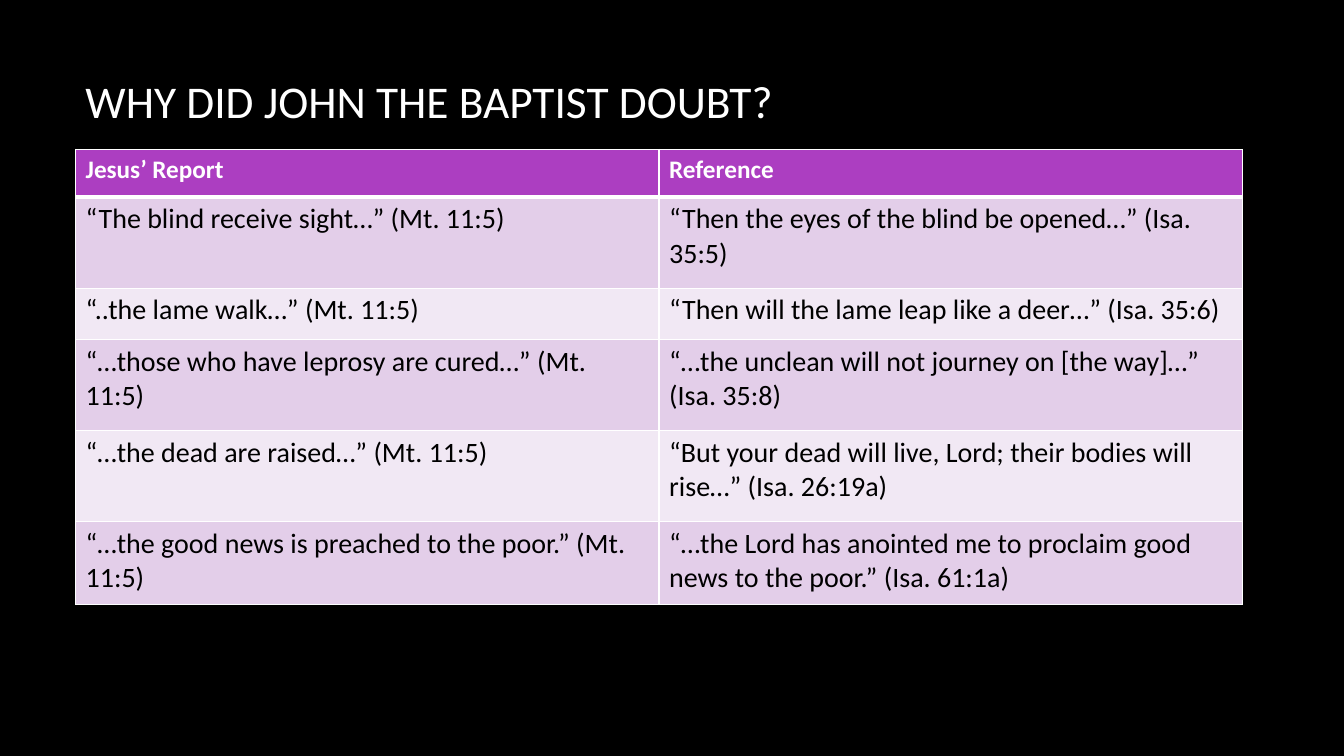
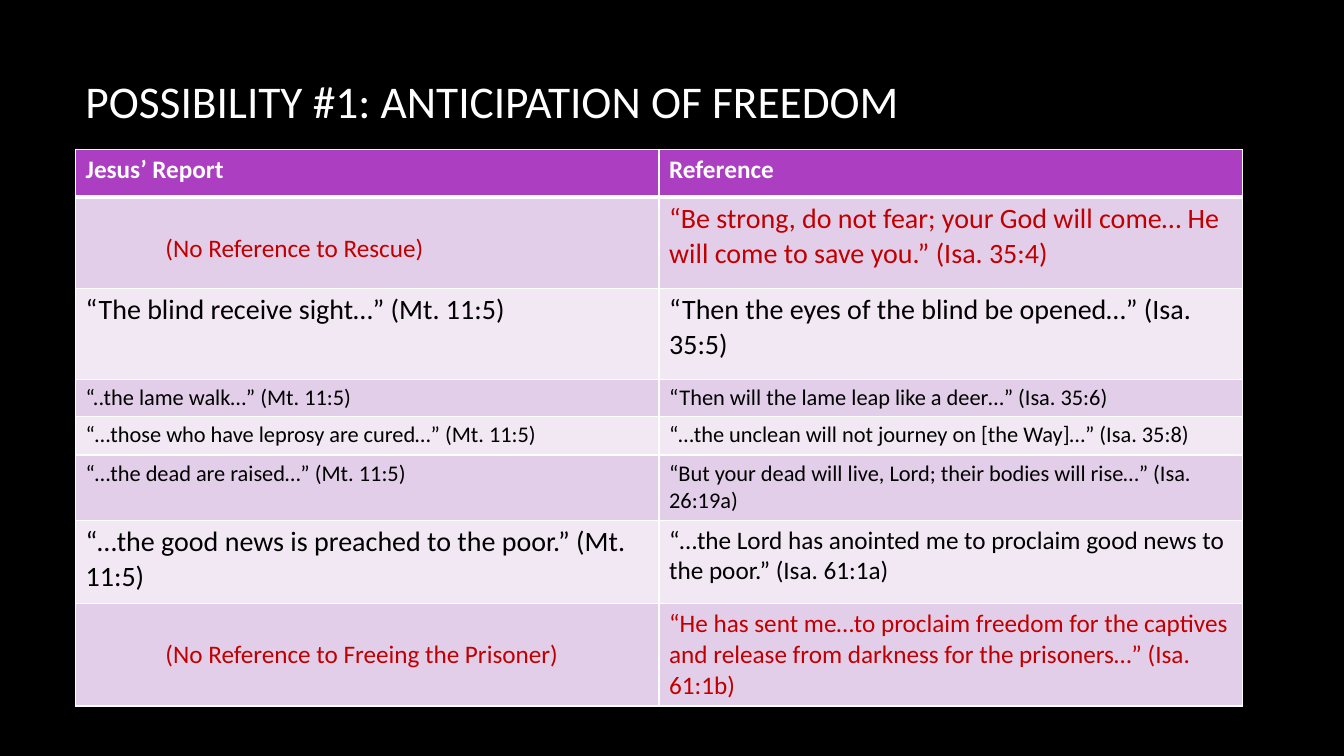
from dataclasses import dataclass

from lxml.etree import SubElement
from pptx import Presentation
from pptx.dml.color import RGBColor as RGB
from pptx.enum.text import MSO_ANCHOR as Anchor
from pptx.oxml.ns import qn
from pptx.util import Pt


@dataclass(frozen=True)
class Theme:
    font: str = "Calibri"
    background: str = "000000"
    light: str = "FFFFFF"
    ink: str = "000000"
    accent: str = "C00000"
    header: str = "AC3EC1"
    bands: tuple[str, str] = ("E3CEE9", "F1E8F4")
    title_size: float = 32.4
    large: float = 20
    medium: float = 18
    small: float = 16
    thin: float = 1
    thick: float = 3


THEME = Theme()
TABLE_LEFT, TABLE_TOP, COLUMN_WIDTH = 54, 106.7, 416.8
NOTE_INDENT, NOTE_TOP = 57, 25.6


@dataclass(frozen=True)
class Entry:
    text: str
    size: float = THEME.large
    color: str = THEME.ink
    bold: bool = False
    note: bool = False


@dataclass(frozen=True)
class Row:
    height: float
    report: Entry
    reference: Entry


@dataclass(frozen=True)
class TableSlide:
    title: str
    rows: list[Row]


def heading(text: str) -> Entry:
    return Entry(text, THEME.medium, THEME.light, bold=True)


def note(text: str) -> Entry:
    """An indented remark, set one line down in its cell."""
    return Entry(text, THEME.medium, THEME.accent, note=True)


def pair(height: float, report: str, reference: str, size: float = THEME.large,
         reference_size: float | None = None) -> Row:
    return Row(height, Entry(report, size), Entry(reference, reference_size or size))


HEADER = Row(34.2, heading("Jesus’ Report"), heading("Reference"))
BLIND = ("“The blind receive sight…” (Mt. 11:5)",
         "“Then the eyes of the blind be opened…” (Isa. 35:5)")
LAME = ("“..the lame walk…” (Mt. 11:5)",
        "“Then will the lame leap like a deer…” (Isa. 35:6)")
LEPROSY = "“…those who have leprosy are cured…” (Mt. 11:5)"
DEAD = ("“…the dead are raised…” (Mt. 11:5)",
        "“But your dead will live, Lord; their bodies will rise…” (Isa. 26:19a)")
POOR = ("“…the good news is preached to the poor.” (Mt. 11:5)",
        "“…the Lord has anointed me to proclaim good news to the poor.” (Isa. 61:1a)")

SLIDES = [
    TableSlide("WHY DID JOHN THE BAPTIST DOUBT?", [
        HEADER,
        pair(65, *BLIND),
        pair(36.5, *LAME),
        pair(65, LEPROSY, "“…the unclean will not journey on [the way]…” (Isa. 35:8)"),
        pair(65, *DEAD),
        pair(59.6, *POOR),
    ]),
    TableSlide("POSSIBILITY #1: ANTICIPATION OF FREEDOM", [
        HEADER,
        Row(65, note("(No Reference to Rescue)"),
            Entry("“Be strong, do not fear; your God will come… He will come to save you.” "
                  "(Isa. 35:4)", color=THEME.accent)),
        pair(65, *BLIND),
        pair(26.7, *LAME, THEME.small),
        pair(27.5, LEPROSY, "“…the unclean will not journey on [the Way]…” (Isa. 35:8)",
             THEME.small),
        pair(46.5, *DEAD, THEME.small),
        pair(59.6, *POOR, reference_size=THEME.medium),
        Row(73.2, note("(No Reference to Freeing the Prisoner)"),
            Entry("“He has sent me…to proclaim freedom for the captives and release from "
                  "darkness for the prisoners…” (Isa. 61:1b)", THEME.medium, THEME.accent)),
    ]),
]


def add_run(p, text: str, size: float, color: str, bold: bool = False) -> None:
    r = p.add_run()
    r.text = text
    r.font.name = THEME.font
    r.font.size = Pt(size)
    r.font.bold = bold
    r.font.color.rgb = RGB.from_string(color)


def add_title(slide, text: str) -> None:
    tf = slide.shapes.add_textbox(Pt(54), Pt(48), Pt(798), Pt(48)).text_frame
    tf.word_wrap = True
    tf.vertical_anchor = Anchor.MIDDLE
    add_run(tf.paragraphs[0], text, THEME.title_size, THEME.light)


def set_borders(cell, top: float, bottom: float) -> None:
    """Draw the four cell edges; call before the fill is set."""
    tc_pr = cell._tc.get_or_add_tcPr()
    edges = {"lnL": THEME.thin, "lnR": THEME.thin, "lnT": top, "lnB": bottom}
    for tag, width in edges.items():
        ln = SubElement(tc_pr, qn(f"a:{tag}"), w=str(Pt(width)))
        fill = SubElement(ln, qn("a:solidFill"))
        SubElement(fill, qn("a:srgbClr"), val=THEME.light)


def fill_cell(cell, entry: Entry, row_index: int) -> None:
    set_borders(cell,
                top=THEME.thick if row_index == 1 else THEME.thin,
                bottom=THEME.thick if row_index == 0 else THEME.thin)
    color = THEME.bands[(row_index - 1) % 2] if row_index else THEME.header
    cell.fill.solid()
    cell.fill.fore_color.rgb = RGB.from_string(color)
    if entry.note:
        cell.margin_left = Pt(7.2 + NOTE_INDENT)
        cell.margin_top = Pt(NOTE_TOP)
    add_run(cell.text_frame.paragraphs[0], entry.text, entry.size, entry.color, entry.bold)


def add_report_table(slide, rows: list[Row]) -> None:
    frame = slide.shapes.add_table(
        len(rows), 2, Pt(TABLE_LEFT), Pt(TABLE_TOP),
        Pt(2 * COLUMN_WIDTH), Pt(sum(row.height for row in rows)))
    table = frame.table
    table.horz_banding = False
    for column in table.columns:
        column.width = Pt(COLUMN_WIDTH)
    for i, row in enumerate(rows):
        table.rows[i].height = Pt(row.height)
        for j, entry in enumerate((row.report, row.reference)):
            fill_cell(table.cell(i, j), entry, i)


def main() -> None:
    prs = Presentation()
    prs.slide_width, prs.slide_height = Pt(960), Pt(540)
    background = prs.slide_master.background.fill
    background.solid()
    background.fore_color.rgb = RGB.from_string(THEME.background)
    for content in SLIDES:
        slide = prs.slides.add_slide(prs.slide_layouts[6])
        add_title(slide, content.title)
        add_report_table(slide, content.rows)
    prs.save("out.pptx")


if __name__ == "__main__":
    main()
